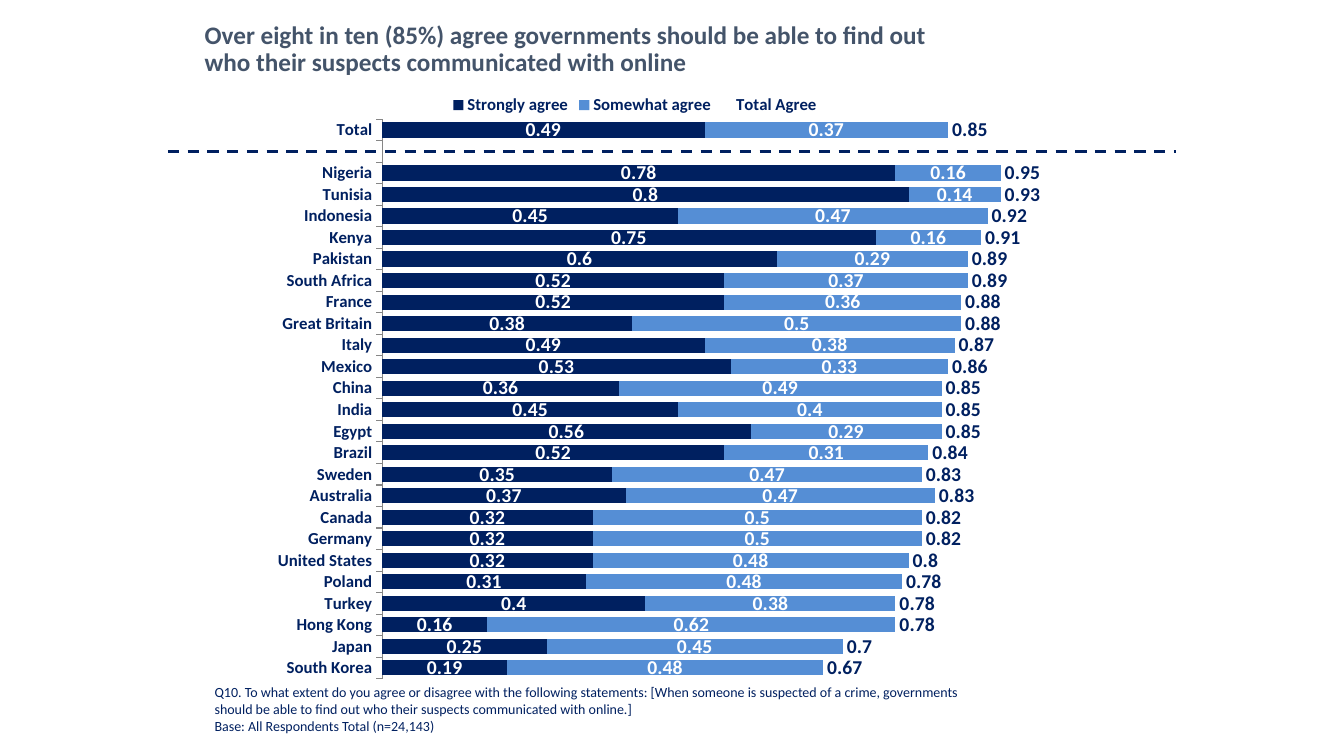
import pptx
import pptx.util
import pptx.chart.data
import pptx.dml.color
import pptx.enum.chart
import pptx.enum.dml
import pptx.enum.shapes
import pptx.enum.text
import pptx.oxml

Pt = pptx.util.Pt
RGBColor = pptx.dml.color.RGBColor
NAVY = RGBColor(0x00, 0x20, 0x60)
BLUE = RGBColor(0x55, 0x8E, 0xD5)
SLATE = RGBColor(0x44, 0x54, 0x6A)
WHITE = RGBColor(0xFF, 0xFF, 0xFF)
BLACK = RGBColor(0x00, 0x00, 0x00)
GREY = RGBColor(0x86, 0x86, 0x86)

TITLE = ("Over eight in ten (85%) agree governments should be able to find out "
         "who their suspects communicated with online")
NOTES = [
    "Q10. To what extent do you agree or disagree with the following statements: "
    "[When someone is suspected of a crime, governments should be able to find out "
    "who their suspects communicated with online.]",
    "Base: All Respondents Total (n=24,143)",
]
ROWS = [
    ("Total", 0.49, 0.37, 0.85),
    ("", None, None, None),
    ("Nigeria", 0.78, 0.16, 0.95),
    ("Tunisia", 0.8, 0.14, 0.93),
    ("Indonesia", 0.45, 0.47, 0.92),
    ("Kenya", 0.75, 0.16, 0.91),
    ("Pakistan", 0.6, 0.29, 0.89),
    ("South Africa", 0.52, 0.37, 0.89),
    ("France", 0.52, 0.36, 0.88),
    ("Great Britain", 0.38, 0.5, 0.88),
    ("Italy", 0.49, 0.38, 0.87),
    ("Mexico", 0.53, 0.33, 0.86),
    ("China", 0.36, 0.49, 0.85),
    ("India", 0.45, 0.4, 0.85),
    ("Egypt", 0.56, 0.29, 0.85),
    ("Brazil", 0.52, 0.31, 0.84),
    ("Sweden", 0.35, 0.47, 0.83),
    ("Australia", 0.37, 0.47, 0.83),
    ("Canada", 0.32, 0.5, 0.82),
    ("Germany", 0.32, 0.5, 0.82),
    ("United States", 0.32, 0.48, 0.8),
    ("Poland", 0.31, 0.48, 0.78),
    ("Turkey", 0.4, 0.38, 0.78),
    ("Hong Kong", 0.16, 0.62, 0.78),
    ("Japan", 0.25, 0.45, 0.7),
    ("South Korea", 0.19, 0.48, 0.67),
]
LABEL = pptx.enum.chart.XL_LABEL_POSITION
BARS = [
    ("Strongly agree", NAVY, WHITE, LABEL.CENTER),
    ("Somewhat agree", BLUE, WHITE, LABEL.CENTER),
    ("Total Agree", None, NAVY, LABEL.INSIDE_BASE),
]
PLOT = {"x": 0.2, "y": 0.059, "w": 0.781, "h": 0.93}


def apply(item, **values):
    for name, value in values.items():
        setattr(item, name, value)


def style(font, size, color, bold=False):
    apply(font, name="Calibri", size=Pt(size), bold=bold)
    font.color.rgb = color


def add_text(slide, box, lines, size, color, bold=False, space=None, **frame):
    shape = slide.shapes.add_textbox(*map(Pt, box))
    text = shape.text_frame
    apply(text, word_wrap=True,
          auto_size=pptx.enum.text.MSO_AUTO_SIZE.SHAPE_TO_FIT_TEXT, **frame)
    for i, line in enumerate(lines):
        para = text.paragraphs[0] if i == 0 else text.add_paragraph()
        apply(para, line_spacing=space)
        run = para.add_run()
        run.text = line
        style(run.font, size, color, bold)


def add_rule(slide, box):
    left, top, width, height = box
    rule = slide.shapes.add_connector(
        pptx.enum.shapes.MSO_CONNECTOR.STRAIGHT,
        Pt(left), Pt(top), Pt(left + width), Pt(top + height))
    rule.line.color.rgb = NAVY
    apply(rule.line, width=Pt(2), dash_style=pptx.enum.dml.MSO_LINE.DASH)
    rule.element.spPr.append(pptx.oxml.parse_xml(
        '<a:effectLst xmlns:a="http://schemas.openxmlformats.org/drawingml/2006/main"/>'))


def set_plot(chart):
    parts = "".join(f'<c:{key}Mode val="edge"/>' for key in "xy")
    parts += "".join(f'<c:{key} val="{value}"/>' for key, value in PLOT.items())
    area = chart.plots[0]._element.getparent()
    for old in area.findall(pptx.oxml.ns.qn("c:layout")):
        area.remove(old)
    area.insert(0, pptx.oxml.parse_xml(
        '<c:layout xmlns:c="http://schemas.openxmlformats.org/drawingml/2006/chart">'
        f'<c:manualLayout><c:layoutTarget val="inner"/>{parts}</c:manualLayout></c:layout>'))


def add_bars(slide, box):
    data = pptx.chart.data.CategoryChartData()
    names, *columns = zip(*ROWS)
    data.categories = names
    for (name, *_), values in zip(BARS, columns):
        data.add_series(name, values)
    chart = slide.shapes.add_chart(
        pptx.enum.chart.XL_CHART_TYPE.BAR_STACKED, *map(Pt, box), data).chart
    apply(chart, has_title=False, has_legend=True)
    style(chart.font, 18, BLACK)
    apply(chart.legend, include_in_layout=False,
          position=pptx.enum.chart.XL_LEGEND_POSITION.TOP)
    style(chart.legend.font, 12, NAVY, True)

    tick = pptx.enum.chart.XL_TICK_MARK
    apply(chart.category_axis, reverse_order=True, has_major_gridlines=False,
          major_tick_mark=tick.OUTSIDE, minor_tick_mark=tick.NONE)
    style(chart.category_axis.tick_labels.font, 12, NAVY, True)
    chart.category_axis.format.line.color.rgb = GREY
    apply(chart.value_axis, visible=False, has_major_gridlines=False,
          minimum_scale=0, maximum_scale=1)

    plot = chart.plots[0]
    apply(plot, gap_width=42, overlap=100, vary_by_categories=False)
    for bar, (_, fill, ink, place) in zip(plot.series, BARS):
        bar.invert_if_negative = False
        if fill is None:
            bar.format.fill.background()
        else:
            bar.format.fill.solid()
            bar.format.fill.fore_color.rgb = fill
        bar.format.line.fill.background()
        apply(bar.data_labels, show_value=True, position=place)
        style(bar.data_labels.font, 14, ink, True)
    set_plot(chart)


def main():
    deck = pptx.Presentation()
    apply(deck, slide_width=Pt(960), slide_height=Pt(540))
    slide = deck.slides.add_slide(deck.slide_layouts[6])
    add_bars(slide, (152.6, 59.8, 602, 429.8))
    add_text(slide, (146.2, 484.6, 561, 44), NOTES, 10, NAVY)
    add_rule(slide, (120, 108, 720, 0))
    add_text(slide, (146.2, 15.8, 520, 39.6), [TITLE], 18, SLATE, True, 0.9,
             vertical_anchor=pptx.enum.text.MSO_ANCHOR.MIDDLE,
             margin_left=0, margin_right=0, margin_top=0, margin_bottom=0)
    deck.save("out.pptx")


if __name__ == "__main__":
    main()
